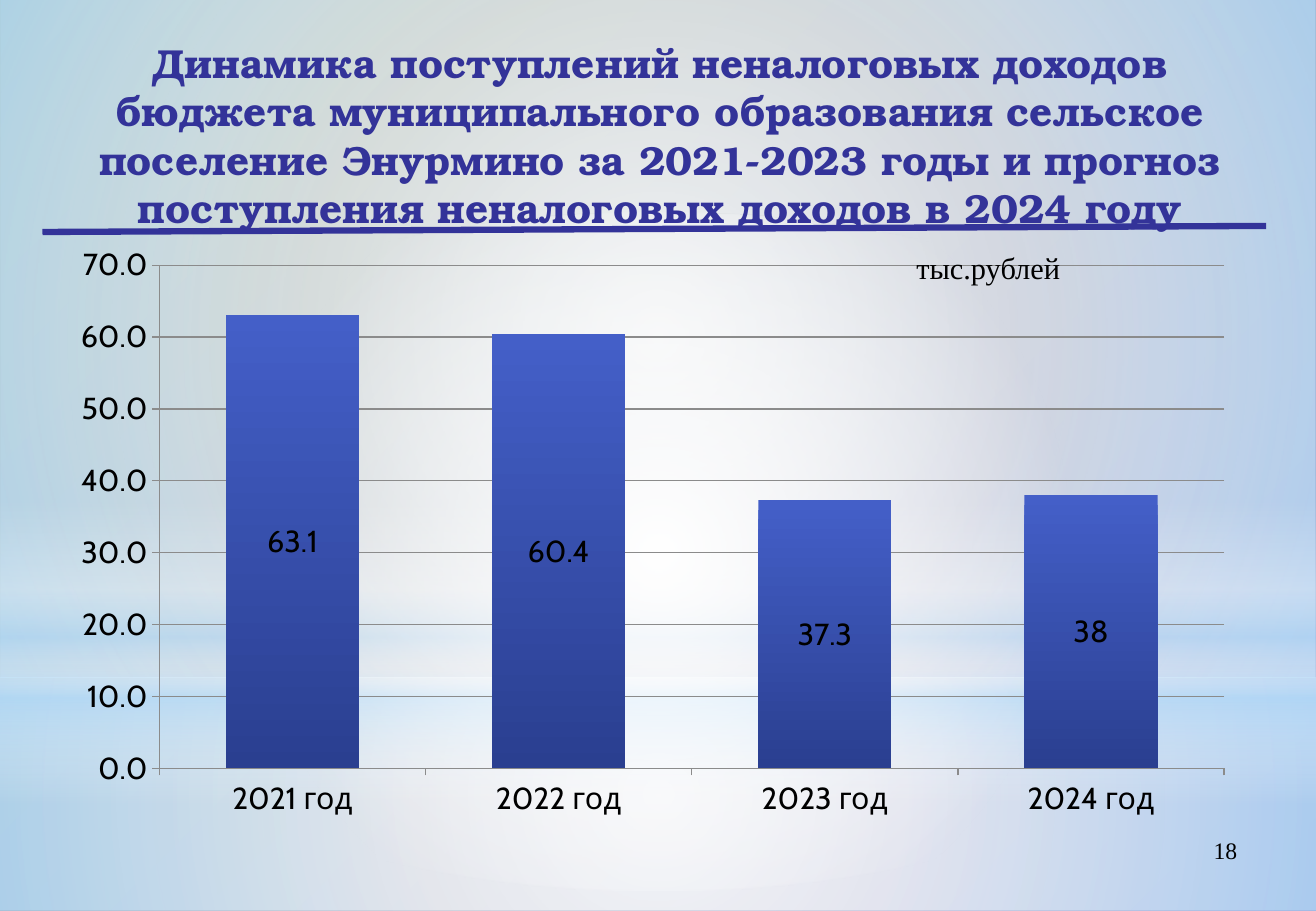
from lxml import etree
from pptx import Presentation
from pptx.chart.data import CategoryChartData
from pptx.dml.color import RGBColor
from pptx.enum.chart import XL_CHART_TYPE as ChartType, XL_LABEL_POSITION as LabelPosition
from pptx.enum.chart import XL_TICK_MARK as TickMark
from pptx.enum.shapes import MSO_CONNECTOR as Connector, MSO_SHAPE as Shape
from pptx.enum.text import MSO_ANCHOR as Anchor, PP_ALIGN as Align
from pptx.oxml import parse_xml
from pptx.oxml.ns import nsdecls, qn
from pptx.util import Inches, Pt

# Content
TITLE = ("Динамика поступлений неналоговых доходов бюджета муниципального образования "
         "сельское поселение Энурмино за 2021-2023 годы и прогноз поступления "
         "неналоговых доходов в 2024 году")
UNIT = "тыс.рублей"
PAGE_NUMBER = "18"
INCOME = {"2021 год": 63.1, "2022 год": 60.4, "2023 год": 37.3, "2024 год": 38}

COLORS = {"title": "333399", "text": "000000", "axis": "8B8B8B", "sage": "96AB94",
          "violet": "8488C4", "white": "FFFFFF", "sky": "B4DCFA",
          "bar_top": "445FC8", "bar_bottom": "2A3F90"}
SERIF = "Times New Roman"

# Backdrop layers: preset, top, height, angle (None is radial), stops of position, colour, opacity
WIDTH, HEIGHT = 10.84, 7.5
LAYERS = [
    (Shape.RECTANGLE, 5.58, 1.92, None, [(0, "white", 91), (37, "white", 76), (100, "sky", 79)]),
    (Shape.RECTANGLE, 0, 5.58, None, [(0, "white", 89), (48, "white", 62), (100, "sky", 79)]),
    (Shape.RECTANGLE, 4.12, 2.5, 90, [(0, "white", 0), (29, "white", 30), (45, "sky", 40),
                                      (55, "white", 26), (65, "sky", 60), (100, "white", 0)]),
    (Shape.OVAL, 1.75, 5.58, None, [(0, "white", 100), (56, "white", 0)]),
]


def rgb(name):
    return RGBColor.from_string(COLORS[name])


def paint_gradient(fill, element, stops, angle=None):
    fill.gradient()
    stop_xml = "".join(
        f'<a:gs pos="{position * 1000}"><a:srgbClr val="{COLORS[color]}">'
        f'<a:alpha val="{opacity * 1000}"/></a:srgbClr></a:gs>'
        for position, color, opacity in stops)
    if angle is None:
        direction = ('<a:path path="circle"><a:fillToRect l="50000" t="50000" '
                     'r="50000" b="50000"/></a:path>')
    else:
        direction = f'<a:lin ang="{angle * 60000}" scaled="0"/>'
    gradient = parse_xml(f'<a:gradFill {nsdecls("a")} rotWithShape="1">'
                         f'<a:gsLst>{stop_xml}</a:gsLst>{direction}</a:gradFill>')
    default = element.find(".//" + qn("a:gradFill"))
    default.getparent().replace(default, gradient)


def add_text(text, left, top, width, height, size, font=SERIF, color="text", bold=False,
             align=Align.LEFT, anchor=Anchor.TOP, wrap=True):
    box = slide.shapes.add_textbox(Inches(left), Inches(top), Inches(width), Inches(height))
    frame = box.text_frame
    frame.word_wrap = wrap
    frame.vertical_anchor = anchor
    paragraph = frame.paragraphs[0]
    paragraph.alignment = align
    run = paragraph.add_run()
    run.text = text
    run.font.name, run.font.size, run.font.bold = font, Pt(size), bold
    run.font.color.rgb = rgb(color)


presentation = Presentation()
presentation.slide_width, presentation.slide_height = Inches(WIDTH), Inches(HEIGHT)
slide = presentation.slides.add_slide(presentation.slide_layouts[6])

# Background and backdrop layers
paint_gradient(slide.background.fill, slide.element,
               [(0, "sage", 100), (100, "violet", 100)], 45)
for preset, top, height, angle, stops in LAYERS:
    shape = slide.shapes.add_shape(preset, 0, Inches(top), Inches(WIDTH), Inches(height))
    shape.shadow.inherit = False
    shape.line.fill.background()
    paint_gradient(shape.fill, shape.element, stops, angle)

# Page number, title and rule
add_text(PAGE_NUMBER, 7.76, 6.83, 2.53, 0.52, 14, align=Align.RIGHT)
add_text(TITLE, 0.56, 0.26, 9.75, 1.7, 24, font="TeX Gyre Bonum", color="title", bold=True,
         align=Align.CENTER, anchor=Anchor.MIDDLE)
rule = slide.shapes.add_connector(Connector.STRAIGHT, Inches(0.35), Inches(1.91),
                                  Inches(10.43), Inches(1.86))
rule.line.color.rgb = rgb("title")
rule.line.width = Pt(3.75)
etree.SubElement(rule.element.spPr, qn("a:effectLst"))

# Column chart
chart_data = CategoryChartData()
chart_data.categories = list(INCOME)
chart_data.add_series("Series 1", list(INCOME.values()))
chart = slide.shapes.add_chart(ChartType.COLUMN_STACKED, Inches(0.47), Inches(1.93),
                               Inches(9.81), Inches(4.89), chart_data).chart
chart.has_legend = chart.has_title = False
chart.font.name, chart.font.size = "Cabin", Pt(18)
chart.font.color.rgb = rgb("text")

plot = chart.plots[0]
plot.gap_width, plot.overlap, plot.vary_by_categories = 100, 100, False
bar_fill = plot.series[0].format.fill
bar_fill.gradient()
bar_fill.gradient_angle = 270
for stop, color in zip(bar_fill.gradient_stops, ("bar_top", "bar_bottom")):
    stop.color.rgb = rgb(color)
plot.has_data_labels = True
plot.data_labels.show_value = True
plot.data_labels.position = LabelPosition.CENTER

value_axis = chart.value_axis
value_axis.minimum_scale, value_axis.maximum_scale, value_axis.major_unit = 0, 70, 10
value_axis.tick_labels.number_format = "0.0"
value_axis.tick_labels.number_format_is_linked = False
value_axis.has_major_gridlines = True
for axis in (chart.category_axis, value_axis):
    axis.major_tick_mark = TickMark.OUTSIDE
    axis.format.line.color.rgb = rgb("axis")
value_axis.major_gridlines.format.line.color.rgb = rgb("axis")

# Plot area placed by its inner edges
plot_area = chart.element.find(".//" + qn("c:plotArea"))
for layout in plot_area.findall(qn("c:layout")):
    plot_area.remove(layout)
edges = "".join(f'<c:{tag} val="{value}"/>' for tag, value in (
    ("layoutTarget", "inner"), ("xMode", "edge"), ("yMode", "edge"),
    ("x", 0.086), ("y", 0.052), ("w", 0.894), ("h", 0.847)))
plot_area.insert(0, parse_xml(f'<c:layout {nsdecls("c")}><c:manualLayout>{edges}'
                              '</c:manualLayout></c:layout>'))

# Unit label
add_text(UNIT, 7.45, 2, 1.4, 0.4, 18, wrap=False)

presentation.save("out.pptx")
